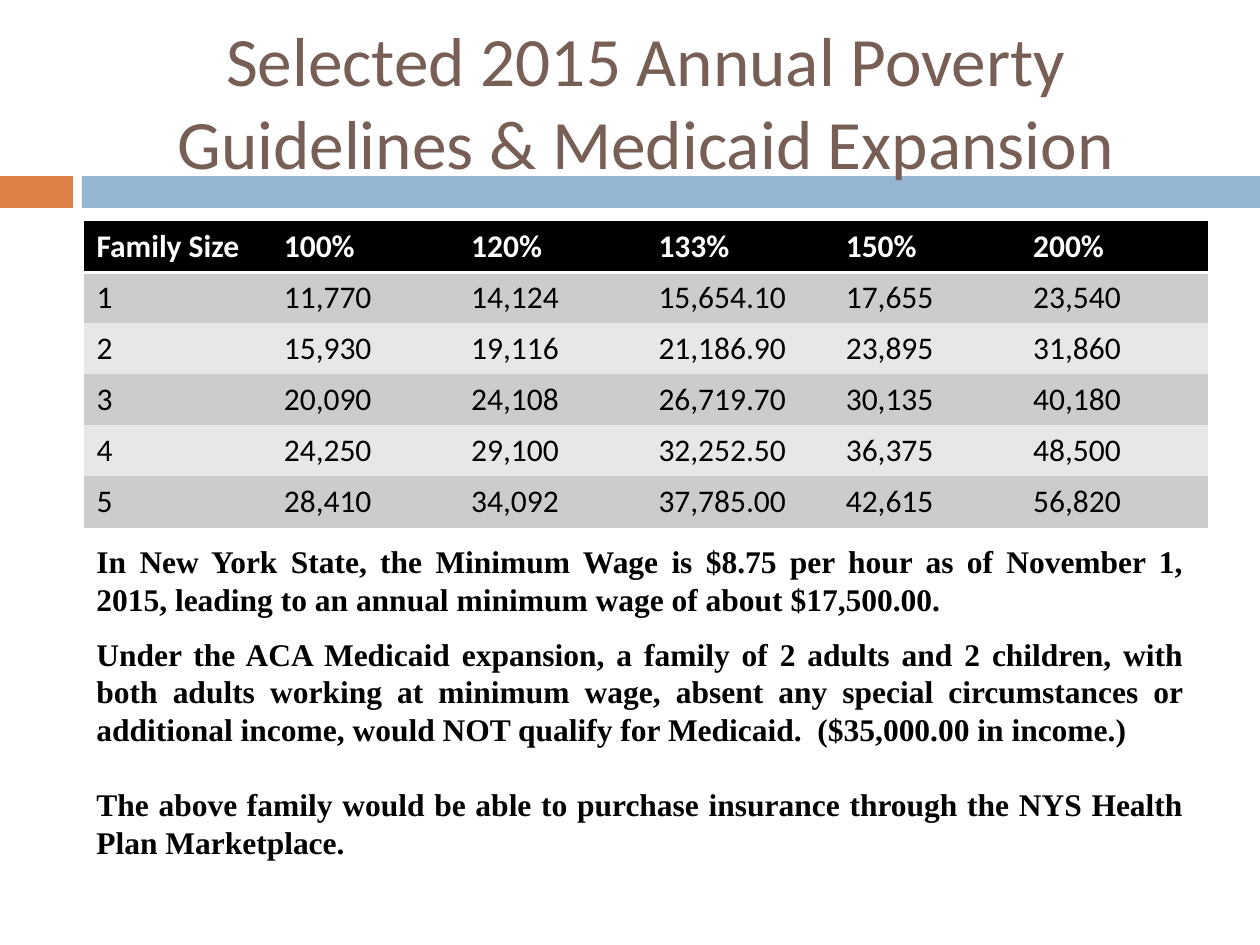
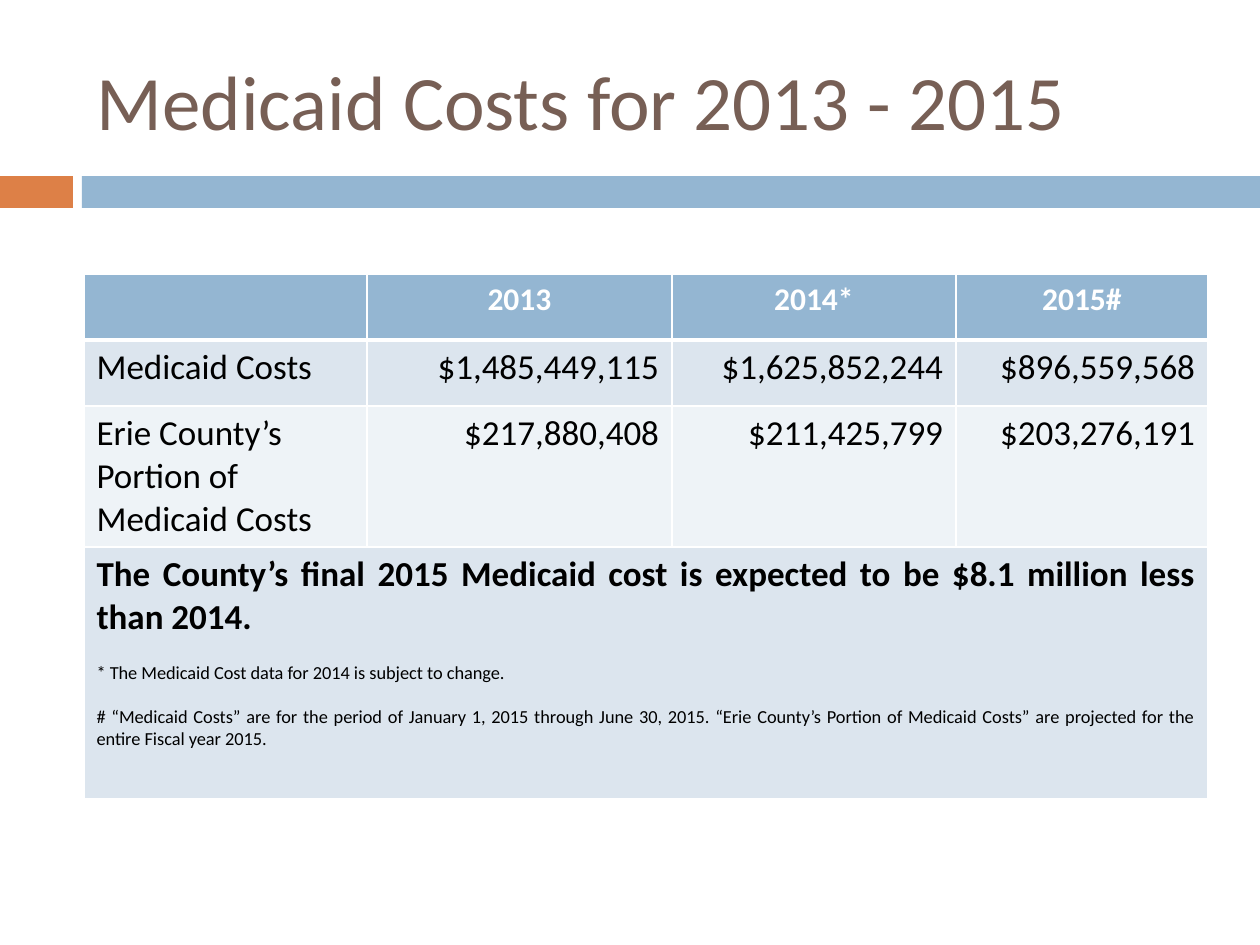
from dataclasses import dataclass
from typing import NamedTuple

from lxml import etree
from pptx import Presentation
from pptx.dml import color as dml
from pptx.enum import shapes, text
from pptx.oxml import ns
from pptx.util import Emu, Pt

PLAIN = "{2D5ABB26-0587-4C30-8999-92F81FD0307C}"
LEFT, MID = text.PP_ALIGN.LEFT, text.PP_ALIGN.CENTER
RIGHT, FULL = text.PP_ALIGN.RIGHT, text.PP_ALIGN.JUSTIFY


@dataclass(frozen=True)
class Theme:
    sans: str = "Calibri"
    serif: str = "Times New Roman"
    title: str = "775F55"
    rust: str = "DD8047"
    blue: str = "94B6D2"
    white: str = "FFFFFF"
    black: str = "000000"
    greys: tuple[str, str] = ("CCCCCC", "E7E7E7")
    pales: tuple[str, str] = ("DCE5EE", "EEF3F7")
    large: float = 44
    wide: float = 39.6
    text: float = 18
    cost: float = 20
    note: float = 10.5
    lead: float = 21.5


class Box(NamedTuple):
    x: int
    y: int
    w: int
    h: int


class Band(NamedTuple):
    box: Box
    fill: str


class Para(NamedTuple):
    text: str
    size: float
    bold: bool = False
    align: text.PP_ALIGN = LEFT
    gap: float = 0


class Grid(NamedTuple):
    box: Box
    head: str
    fills: tuple[str, str]
    line: float
    rule: float


THEME = Theme()
TITLE = Box(84, 32, 1124, 136)
BANDS = (
    Band(Box(0, 176, 73, 32), THEME.rust),
    Band(Box(82, 176, 1178, 32), THEME.blue),
)

LEVELS = [
    ["Family Size", "100%", "120%", "133%", "150%", "200%"],
    ["1", "11,770", "14,124", "15,654.10", "17,655", "23,540"],
    ["2", "15,930", "19,116", "21,186.90", "23,895", "31,860"],
    ["3", "20,090", "24,108", "26,719.70", "30,135", "40,180"],
    ["4", "24,250", "29,100", "32,252.50", "36,375", "48,500"],
    ["5", "28,410", "34,092", "37,785.00", "42,615", "56,820"],
]
WAGES = [
    Para("In New York State, the Minimum Wage is $8.75 per hour as of November 1, 2015, "
         "leading to an annual minimum wage of about $17,500.00.",
         THEME.text, True, FULL, 10),
    Para("Under the ACA Medicaid expansion, a family of 2 adults and 2 children, with both "
         "adults working at minimum wage, absent any special circumstances or additional "
         "income, would NOT qualify for Medicaid.  ($35,000.00 in income.)",
         THEME.text, True, FULL, THEME.lead),
    Para("The above family would be able to purchase insurance through the NYS Health "
         "Plan Marketplace.", THEME.text, True, FULL),
]
COSTS = [
    ["", "2013", "2014*", "2015#"],
    ["Medicaid Costs", "$1,485,449,115", "$1,625,852,244", "$896,559,568"],
    ["Erie County’s Portion of Medicaid Costs",
     "$217,880,408", "$211,425,799", "$203,276,191"],
]
NOTES = [
    Para("The County’s final 2015 Medicaid cost is expected to be $8.1 million less "
         "than 2014.", THEME.cost, True, FULL, 12.8),
    Para("* The Medicaid Cost data for 2014 is subject to change.",
         THEME.note, False, FULL, 12.8),
    Para("# “Medicaid Costs” are for the period of January 1, 2015 through June 30, 2015. "
         "“Erie County’s Portion of Medicaid Costs” are projected for the entire Fiscal "
         "year 2015.", THEME.note, False, FULL),
]


def px(size: int) -> Emu:
    return Emu(round(size * 914400 / 126))


def place(box: Box) -> list[Emu]:
    return [px(side) for side in box]


def rgb(code: str) -> dml.RGBColor:
    return dml.RGBColor.from_string(code)


def write(frame, paras: list[Para], face: str, ink: str, lead: float = 0) -> None:
    for n, item in enumerate(paras):
        para = frame.paragraphs[0] if n == 0 else frame.add_paragraph()
        para.text = item.text
        para.alignment = item.align
        para.space_before = Pt(0)
        para.space_after = Pt(item.gap)
        if lead:
            para.line_spacing = Pt(lead)
        para.font.name = face
        para.font.size = Pt(item.size)
        para.font.bold = item.bold
        para.font.color.rgb = rgb(ink)


def add_bands(slide, layout) -> None:
    for n, band in enumerate(BANDS):
        bar = slide.shapes.add_shape(shapes.MSO_SHAPE.RECTANGLE, *place(band.box))
        bar.shadow.inherit = False
        bar.fill.solid()
        bar.fill.fore_color.rgb = rgb(band.fill)
        bar.line.fill.background()
        bar.name = f"Band {n + 1}"
        bar.element.nvSpPr.cNvPr.set("id", str(100 + n))
        layout.shapes.element.insert(2 + n, bar.element)


def add_title(slide, words: str, size: float, align: text.PP_ALIGN) -> None:
    title = slide.shapes.title
    title.left, title.top, title.width, title.height = place(TITLE)
    frame = title.text_frame
    frame.auto_size = text.MSO_AUTO_SIZE.NONE
    frame.vertical_anchor = text.MSO_ANCHOR.MIDDLE
    write(frame, [Para(words, size, align=align)], THEME.sans, THEME.title)


def edge(cell, sides: dict[str, float]) -> None:
    props = cell._tc.get_or_add_tcPr()
    for n, (side, width) in enumerate(sides.items()):
        line = etree.Element(ns.qn(f"a:ln{side}"), w=str(Pt(width)))
        if width:
            fill = etree.SubElement(line, ns.qn("a:solidFill"))
            etree.SubElement(fill, ns.qn("a:srgbClr"), val=THEME.white)
        else:
            etree.SubElement(line, ns.qn("a:noFill"))
        props.insert(n, line)


def add_grid(slide, grid: Grid, rows: list[list[list[Para]]]):
    table = slide.shapes.add_table(len(rows), len(rows[0]), *place(grid.box)).table
    table._tbl.tblPr.find(ns.qn("a:tableStyleId")).text = PLAIN
    for r, row in enumerate(rows):
        for c, paras in enumerate(row):
            cell = table.cell(r, c)
            cell.fill.solid()
            fill = grid.fills[(r - 1) % 2] if r else grid.head
            cell.fill.fore_color.rgb = rgb(fill)
            ink = THEME.black if r else THEME.white
            write(cell.text_frame, paras, THEME.sans, ink)
            edge(cell, {
                "L": grid.line,
                "R": grid.line,
                "T": grid.rule if r == 1 else grid.line,
                "B": grid.rule if r == 0 else grid.line,
            })
    return table


def draw_levels(slide) -> None:
    add_title(slide, "Selected 2015 Annual Poverty Guidelines & Medicaid Expansion",
              THEME.wide, MID)
    rows = [[[Para(word, THEME.text, r == 0)] for word in row]
            for r, row in enumerate(LEVELS)]
    add_grid(slide, Grid(Box(84, 221, 1124, 306), THEME.black, THEME.greys, 0, 2), rows)
    frame = slide.shapes.add_textbox(*place(Box(84, 536, 1112, 352))).text_frame
    frame.word_wrap = True
    write(frame, WAGES, THEME.serif, THEME.black, THEME.lead)


def draw_costs(slide) -> None:
    add_title(slide, "Medicaid Costs for 2013 - 2015", THEME.large, LEFT)
    rows = [[[Para(word, THEME.text, True, MID)] for word in COSTS[0]]]
    rows += [[[Para(word, THEME.cost, align=RIGHT if c else LEFT)]
              for c, word in enumerate(row)] for row in COSTS[1:]]
    rows.append([NOTES, [], [], []])
    table = add_grid(
        slide, Grid(Box(84, 274, 1124, 525), THEME.blue, THEME.pales, 1, 3), rows)
    for col, width in zip(table.columns, (283, 305, 284, 252)):
        col.width = px(width)
    for row, height in zip(table.rows, (66, 66, 141, 252)):
        row.height = px(height)
    table.cell(3, 0).merge(table.cell(3, 3))


def main() -> None:
    deck = Presentation()
    deck.slide_width, deck.slide_height = px(1260), px(945)
    layout = deck.slide_layouts[5]
    first, second = (deck.slides.add_slide(layout) for _ in range(2))
    add_bands(first, layout)
    draw_levels(first)
    draw_costs(second)
    deck.save("out.pptx")


if __name__ == "__main__":
    main()
